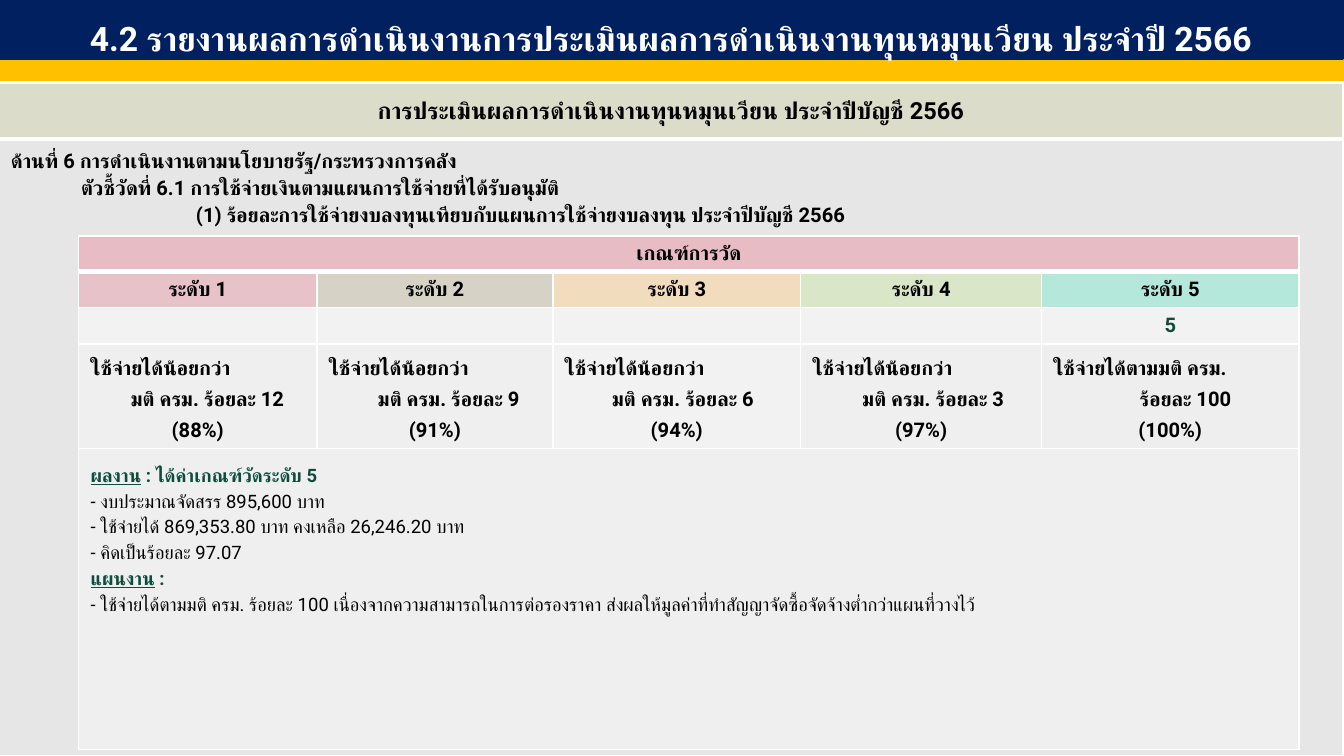
from lxml.etree import SubElement
from pptx import Presentation
from pptx.dml.color import RGBColor
from pptx.enum.shapes import MSO_SHAPE
from pptx.enum.text import MSO_ANCHOR as ANCHOR, PP_ALIGN as ALIGN
from pptx.oxml.ns import qn
from pptx.util import Inches, Pt

WHITE = RGBColor(0xFF, 0xFF, 0xFF)
BLACK = RGBColor(0, 0, 0)
NAVY = RGBColor(0x00, 0x20, 0x60)
GOLD = RGBColor(0xFF, 0xC0, 0x00)
KHAKI = RGBColor(0xDB, 0xDC, 0xC9)
GREY = RGBColor(0xE7, 0xE6, 0xE6)
PALE = RGBColor(0xF2, 0xF2, 0xF2)
GREEN = RGBColor(0x0E, 0x4D, 0x3C)
PINK = RGBColor(0xE8, 0xAB, 0xB5)
STONE = RGBColor(0xD6, 0xD2, 0xC4)
PEACH = RGBColor(0xF9, 0xD8, 0xA3)
LIME = RGBColor(0xD1, 0xE6, 0xB5)
MINT = RGBColor(0x91, 0xEA, 0xD2)


class Deck:
    font = "Roboto"

    def __init__(self, width, height):
        self.prs = Presentation()
        self.prs.slide_width, self.prs.slide_height = Inches(width), Inches(height)
        self.slide = self.prs.slides.add_slide(self.prs.slide_layouts[6])

    def bar(self, left, top, width, height, color):
        sp = self.slide.shapes.add_shape(
            MSO_SHAPE.RECTANGLE, *map(Inches, (left, top, width, height)))
        sp.shadow.inherit = False
        sp.fill.solid()
        sp.fill.fore_color.rgb = color
        sp.line.color.rgb = color
        sp.line.width = Pt(1)
        return sp

    def run(self, p, text, size=12, color=BLACK, bold=True, underline=False):
        r = p.add_run()
        r.text = text
        f = r.font
        f.size, f.bold, f.underline = Pt(size), bold, underline
        f.name, f.color.rgb = self.font, color
        SubElement(r._r.get_or_add_rPr(), qn("a:cs"), typeface=self.font)

    def para(self, tf, text, align=ALIGN.LEFT, spacing=1.0, indent=0, after=0, **style):
        """Fill the empty first paragraph, or add one below the text."""
        p = tf.paragraphs[0] if not tf.text else tf.add_paragraph()
        p.alignment, p.line_spacing, p.space_after = align, spacing, Pt(after)
        if indent:
            p._p.get_or_add_pPr().set("marL", str(Inches(indent)))
        self.run(p, text, **style)
        return p

    def table(self, left, top, cols, rows):
        t = self.slide.shapes.add_table(
            len(rows), len(cols), *map(Inches, (left, top, sum(cols), sum(rows)))).table
        t.first_row = t.horz_banding = False
        for col, width in zip(t.columns, cols):
            col.width = Inches(width)
        for row, height in zip(t.rows, rows):
            row.height = Inches(height)
        return t

    def cell(self, cell, color, alpha=100, top=1, bottom=1):
        """Give a cell white borders and a fill; return its text frame."""
        pr = cell._tc.get_or_add_tcPr()
        for side, width in zip("LRTB", (1, 1, top, bottom)):
            ln = SubElement(pr, qn(f"a:ln{side}"), w=str(Pt(width)))
            fill = SubElement(ln, qn("a:solidFill"))
            SubElement(fill, qn("a:srgbClr"), val=str(WHITE))
        cell.fill.solid()
        cell.fill.fore_color.rgb = color
        if alpha < 100:
            rgb = pr.find(qn("a:solidFill")).find(qn("a:srgbClr"))
            SubElement(rgb, qn("a:alpha"), val=str(alpha * 1000))
        return cell.text_frame


def add_frame(deck):
    t = deck.table(-0.01, 0.69, [11.11], [0.46, 5.1])
    heading, body = t.cell(0, 0), t.cell(1, 0)
    for c in (heading, body):
        c.margin_top = c.margin_bottom = Inches(0.07)
    heading.vertical_anchor = ANCHOR.MIDDLE
    deck.para(deck.cell(heading, KHAKI, bottom=3),
              "การประเมินผลการดำเนินงานทุนหมุนเวียน ประจำปีบัญชี 2566", ALIGN.CENTER, size=14)
    tf = deck.cell(body, GREY, top=3)
    for indent, text in (
            (0, "ด้านที่ 6 การดำเนินงานตามนโยบายรัฐ/กระทรวงการคลัง"),
            (0.58, "ตัวชี้วัดที่ 6.1 การใช้จ่ายเงินตามแผนการใช้จ่ายที่ได้รับอนุมัติ"),
            (1.53, "(1) ร้อยละการใช้จ่ายงบลงทุนเทียบกับแผนการใช้จ่ายงบลงทุน ประจำปีบัญชี 2566")):
        deck.para(tf, text, spacing=1.1, indent=indent, after=0.5)


def add_criteria(deck):
    t = deck.table(0.65, 1.95, [1.97, 1.95, 2.05, 1.99, 2.13], [0.29, 0.29, 0.29, 0.84, 2.49])
    for row in (0, 4):
        t.cell(row, 0).merge(t.cell(row, 4))
    deck.para(deck.cell(t.cell(0, 0), PINK, 70, bottom=3), "เกณฑ์การวัด", ALIGN.CENTER)

    less = "ใช้จ่ายได้น้อยกว่า"
    levels = (
        (PINK, 60, 80, less, "มติ ครม. ร้อยละ 12", 0.16, "(88%)"),
        (STONE, 96, 80, less, "มติ ครม. ร้อยละ 9", 0.23, "(91%)"),
        (PEACH, 60, 100, less, "มติ ครม. ร้อยละ 6", 0.1, "(94%)"),
        (LIME, 60, 80, less, "มติ ครม. ร้อยละ 3", 0.2, "(97%)"),
        (MINT, 60, 70, "ใช้จ่ายได้ตามมติ ครม.", "ร้อยละ 100", 0.25, "(100%)"))
    for i, (color, alpha, body_alpha, first, second, indent, share) in enumerate(levels):
        deck.para(deck.cell(t.cell(1, i), color, alpha, top=3), f"ระดับ {i + 1}", ALIGN.CENTER)
        score = t.cell(2, i)
        score.vertical_anchor = ANCHOR.MIDDLE
        tf = deck.cell(score, PALE)
        if i == 4:
            deck.para(tf, "5", ALIGN.CENTER, color=GREEN)
        else:
            SubElement(tf.paragraphs[0]._p, qn("a:endParaRPr"), sz="1200")
        tf = deck.cell(t.cell(3, i), PALE, body_alpha)
        deck.para(tf, first, spacing=1.3)
        deck.para(tf, second, ALIGN.CENTER, 1.3, indent)
        deck.para(tf, share, ALIGN.CENTER, 1.3)

    tf = deck.cell(t.cell(4, 0), PALE, 80)
    results = (
        ("ผลงาน", " : ได้ค่าเกณฑ์วัดระดับ 5", 1.5, (
            "- งบประมาณจัดสรร 895,600 บาท",
            "- ใช้จ่ายได้ 869,353.80 บาท คงเหลือ 26,246.20 บาท",
            "- คิดเป็นร้อยละ 97.07")),
        ("แผนงาน", " :", 1.2, (
            "- ใช้จ่ายได้ตามมติ ครม. ร้อยละ 100 เนื่องจากความสามารถในการต่อรองราคา "
            "ส่งผลให้มูลค่าที่ทำสัญญาจัดซื้อจัดจ้างต่ำกว่าแผนที่วางไว้",)))
    for label, rest, spacing, items in results:
        p = deck.para(tf, label, spacing=spacing, size=11, color=GREEN, underline=True)
        deck.run(p, rest, size=11, color=GREEN)
        for item in items:
            deck.para(tf, item, spacing=1.2, size=11, bold=False)


def main():
    deck = Deck(11.11, 6.25)
    deck.bar(0, 0.5, 11.11, 0.16, GOLD)
    add_frame(deck)
    title = deck.bar(-0.01, -0.02, 11.11, 0.51, NAVY).text_frame
    title.word_wrap = True
    title.vertical_anchor = ANCHOR.MIDDLE
    deck.para(title, "4.2 รายงานผลการดำเนินงานการประเมินผลการดำเนินงานทุนหมุนเวียน ประจำปี 2566",
              ALIGN.CENTER, 1.5, size=20, color=WHITE)
    add_criteria(deck)
    deck.prs.save("out.pptx")


if __name__ == "__main__":
    main()
